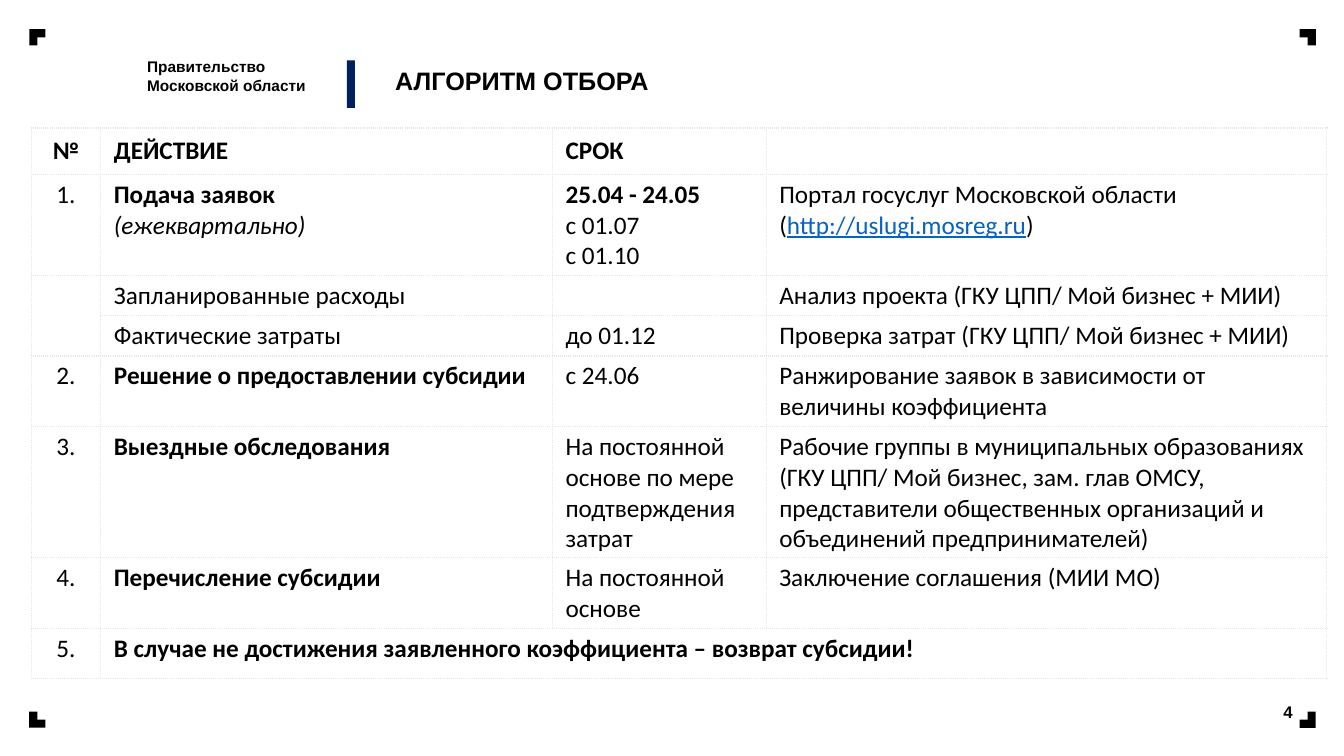
from pptx import Presentation
from pptx.dml.color import RGBColor
from pptx.enum import shapes, text
from pptx.oxml import parse_xml
from pptx.oxml.ns import nsdecls, qn
from pptx.util import Inches, Pt

BLACK = RGBColor(0, 0, 0)
NAVY = RGBColor(0x00, 0x20, 0x60)
LINK_BLUE = RGBColor(0x05, 0x63, 0xC1)
BORDER = RGBColor(0xE7, 0xE6, 0xE6)
LINK = "http://uslugi.mosreg.ru"


def style_font(font, size, name="Arial", bold=True):
    font.size = Pt(size)
    font.name = name
    font.bold = bold
    font.color.rgb = BLACK


def add_block(left, top, width, height, color):
    shape = slide.shapes.add_shape(shapes.MSO_SHAPE.RECTANGLE, Inches(left), Inches(top),
                                   Inches(width), Inches(height))
    shape.shadow.inherit = False
    shape.fill.solid()
    shape.fill.fore_color.rgb = color
    shape.line.fill.background()
    return shape


presentation = Presentation()
presentation.slide_width = Inches(13.33)
presentation.slide_height = Inches(7.5)
slide = presentation.slides.add_slide(presentation.slide_layouts[5])

# Corner marks: the L-shaped preset is set in the XML
for left, top, rotation in [(0.29, 7.06, 0), (0.29, 0.29, 90), (12.89, 0.29, 180), (12.89, 7.06, 270)]:
    corner = add_block(left, top, 0.16, 0.16, BLACK)
    corner.rotation = rotation
    corner.element.spPr.find(qn("a:prstGeom")).set("prst", "corner")

# Header bar, issuer and page number
add_block(3.44, 0.6, 0.08, 0.47, NAVY)

issuer = slide.shapes.add_textbox(Inches(1.36), Inches(0.52), Inches(1.81), Inches(0.47))
issuer.text_frame.text = "Правительство\nМосковской области"
issuer.text_frame.word_wrap = False
issuer.text_frame.auto_size = text.MSO_AUTO_SIZE.SHAPE_TO_FIT_TEXT
for paragraph in issuer.text_frame.paragraphs:
    style_font(paragraph.runs[0].font, 11)

page_number = slide.shapes.add_textbox(Inches(12.5), Inches(6.89), Inches(0.55), Inches(0.34))
page_number.text_frame.text = "4"
page_number.text_frame.word_wrap = True
page_number.text_frame.vertical_anchor = text.MSO_ANCHOR.MIDDLE
paragraph = page_number.text_frame.paragraphs[0]
paragraph.alignment = text.PP_ALIGN.CENTER
style_font(paragraph.runs[0].font, 12)

# Title
title = slide.shapes.title
title.left, title.top, title.width, title.height = Inches(3.82), Inches(0.63), Inches(9.51), Inches(0.79)
title.text_frame.text = "АЛГОРИТМ ОТБОРА"
title.text_frame.vertical_anchor = text.MSO_ANCHOR.TOP
title.text_frame.auto_size = text.MSO_AUTO_SIZE.NONE
paragraph = title.text_frame.paragraphs[0]
paragraph.alignment = text.PP_ALIGN.LEFT
paragraph.line_spacing = 0.9
style_font(paragraph.runs[0].font, 18)

# Table content: "*" starts a bold paragraph, "_" an italic one
rows = [
    ["*№", "*ДЕЙСТВИЕ", "*СРОК", ""],
    ["1.", "*Подача заявок\n_(ежеквартально)", "*25.04 - 24.05\nс 01.07\nс 01.10",
     f"Портал госуслуг Московской области ({LINK})"],
    ["", "Запланированные расходы", "", "Анализ проекта (ГКУ ЦПП/ Мой бизнес + МИИ)"],
    ["", "Фактические затраты", "до 01.12", "Проверка затрат (ГКУ ЦПП/ Мой бизнес + МИИ)"],
    ["2.", "*Решение о предоставлении субсидии", "с 24.06",
     "Ранжирование заявок в зависимости от величины коэффициента"],
    ["3.", "*Выездные обследования", "На постоянной основе по мере подтверждения затрат",
     "Рабочие группы в муниципальных образованиях\n(ГКУ ЦПП/ Мой бизнес, зам. глав ОМСУ, "
     "представители общественных организаций и объединений предпринимателей)"],
    ["4.", "*Перечисление субсидии", "На постоянной основе", "Заключение соглашения (МИИ МО)"],
    ["5.", "*В случае не достижения заявленного коэффициента – возврат субсидии!", "", ""],
]
column_widths = [0.69, 4.48, 2.12, 5.56]
row_heights = [0.46, 0.92, 0.38, 0.38, 0.68, 1.26, 0.5, 0.5]

frame = slide.shapes.add_table(len(rows), len(column_widths), Inches(0.31), Inches(1.27),
                               Inches(sum(column_widths)), Inches(sum(row_heights)))
table = frame.table
table.first_row = table.horz_banding = False
for column, width in zip(table.columns, column_widths):
    column.width = Inches(width)
for row, height in zip(table.rows, row_heights):
    row.height = Inches(height)
table.cell(2, 0).merge(table.cell(3, 0))
table.cell(7, 1).merge(table.cell(7, 3))

for row_index, row in enumerate(rows):
    for column_index, content in enumerate(row):
        cell = table.cell(row_index, column_index)
        cell.margin_left = cell.margin_right = Inches(0.13)
        cell.margin_top = cell.margin_bottom = Inches(0.05)
        cell.vertical_anchor = text.MSO_ANCHOR.TOP if row_index else text.MSO_ANCHOR.MIDDLE
        cell.fill.background()

        # Dotted borders come before the fill in the cell properties
        properties = cell._tc.get_or_add_tcPr()
        for position, side in enumerate("LRTB"):
            properties.insert(position, parse_xml(
                f'<a:ln{side} {nsdecls("a")} w="12700"><a:solidFill><a:srgbClr val="{BORDER}"/>'
                f'</a:solidFill><a:prstDash val="sysDot"/></a:ln{side}>'))

        cell.text_frame.text = "\n".join(line.lstrip("*_") for line in content.split("\n"))
        for line, paragraph in zip(content.split("\n"), cell.text_frame.paragraphs):
            paragraph.alignment = text.PP_ALIGN.LEFT if column_index else text.PP_ALIGN.CENTER
            style_font(paragraph.font, 18, "Calibri", line.startswith("*"))
            if LINK in line:
                before, after = line.split(LINK)
                paragraph.text = before
                for part in (LINK, after):
                    paragraph.add_run().text = part
            for run in paragraph.runs:
                style_font(run.font, 18, "Calibri", line.startswith("*"))
                run.font.italic = line.startswith("_")
                if run.text == LINK:
                    run.font.color.rgb = LINK_BLUE
                    run.font.underline = True

presentation.save("out.pptx")
